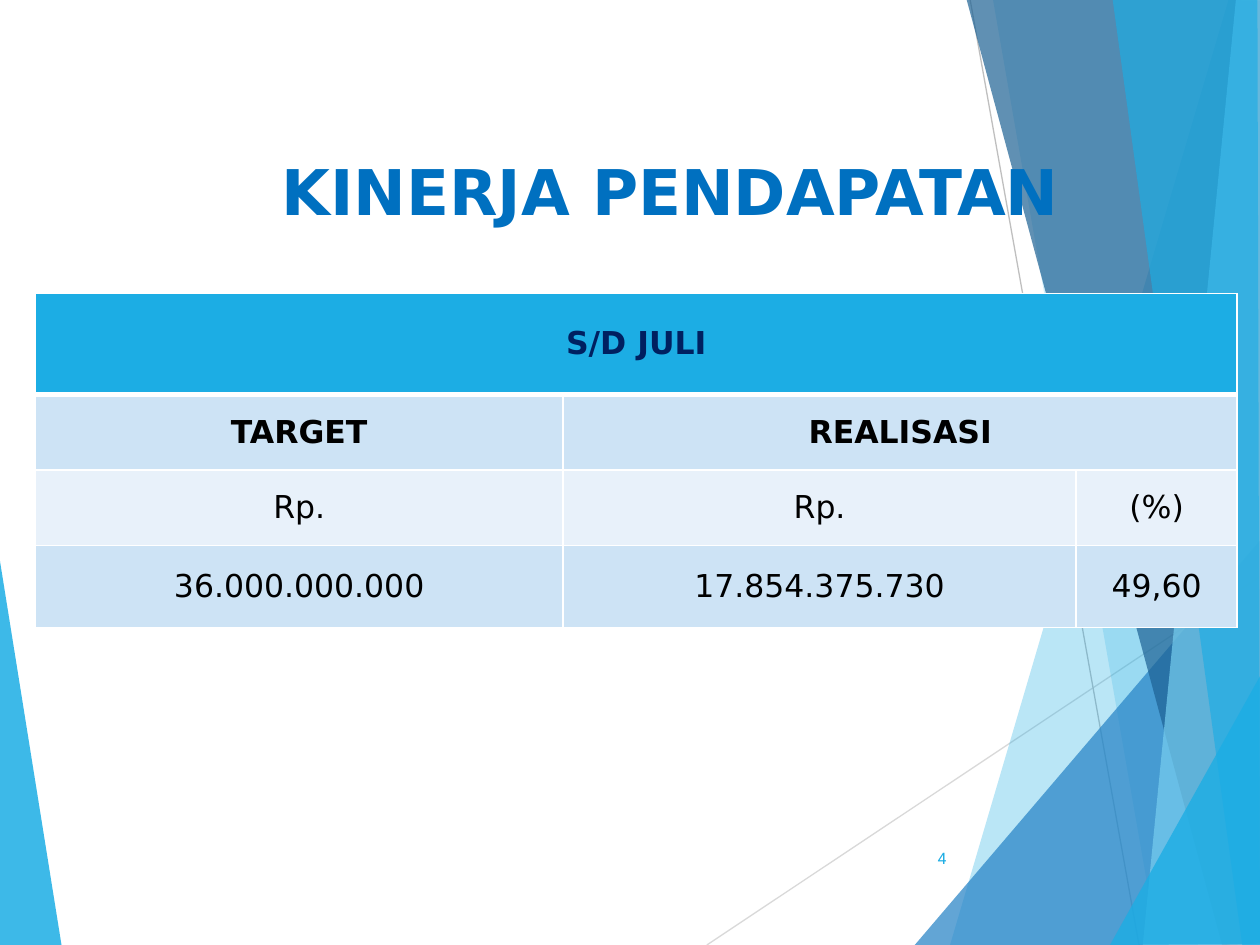
from dataclasses import dataclass

from lxml.etree import SubElement
from pptx import Presentation
from pptx.dml.color import RGBColor
from pptx.enum.shapes import MSO_CONNECTOR as Connector
from pptx.enum.text import MSO_ANCHOR as Anchor, PP_ALIGN as Align
from pptx.oxml.ns import qn
from pptx.util import Inches, Pt


@dataclass(frozen=True)
class Theme:
    sky: str = "1CADE4"
    blue: str = "2683C6"
    deep: str = "1D6294"
    pale: str = "77CEEF"
    title: str = "0070C0"
    navy: str = "002060"
    black: str = "000000"
    white: str = "FFFFFF"
    band_dark: str = "CDE3F5"
    band_light: str = "E8F1FA"
    heading_font: str = "DejaVu Sans"
    number_font: str = "Roboto"
    title_size: int = 36
    table_size: int = 18
    number_size: int = 9


@dataclass(frozen=True)
class Facet:
    points: tuple[tuple[float, float], ...]
    color: str
    opacity: int


@dataclass(frozen=True)
class Ray:
    start: tuple[float, float]
    end: tuple[float, float]
    color: str


@dataclass(frozen=True)
class Entry:
    row: int
    column: int
    text: str
    fill: str
    span: int = 1
    color: str = "000000"
    bold: bool = False
    tight: bool = False


THEME = Theme()

LEFT_FACET = Facet(((-0.01, 4.39), (0.49, 7.51), (-0.01, 7.5)), THEME.sky, 85)
RAYS = (
    Ray((5.61, 7.5), (10.01, 4.57), "D9D9D9"),
    Ray((7.7, 0), (9.04, 7.5), "BFBFBF"),
)
RIGHT_FACETS = (
    Facet(((9.75, 0), (7.54, 7.5), (10.02, 7.51), (10.01, 0.01)), THEME.sky, 30),
    Facet(((7.88, -0.01), (9.19, 7.5), (10.01, 7.5), (10.01, -0.01)), THEME.sky, 20),
    Facet(((7.26, 7.5), (10, 4.29), (10.01, 7.5)), THEME.blue, 72),
    Facet(((7.67, -0.01), (9.7, 7.5), (10.01, 7.49), (10.01, -0.01)), THEME.deep, 70),
    Facet(((9.81, -0.01), (9.07, 7.5), (10.01, 7.5), (10, -0.01)), THEME.pale, 70),
    Facet(((8.83, -0.01), (9.86, 7.5), (10, 7.5), (9.98, -0.01)), THEME.sky, 65),
    Facet(((8.81, 7.5), (10.01, 5.35), (10.01, 7.49)), THEME.sky, 80),
)

COLUMNS = (4.19, 4.07, 1.28)
ROWS = (0.8, 0.6, 0.6, 0.65)
ENTRIES = (
    Entry(0, 0, "S/D JULI", THEME.sky, span=3, color=THEME.navy, bold=True),
    Entry(1, 0, "TARGET", THEME.band_dark, bold=True),
    Entry(1, 1, "REALISASI", THEME.band_dark, span=2, bold=True),
    Entry(2, 0, "Rp.", THEME.band_light),
    Entry(2, 1, "Rp.", THEME.band_light),
    Entry(2, 2, "(%)", THEME.band_light),
    Entry(3, 0, "36.000.000.000", THEME.band_dark),
    Entry(3, 1, "17.854.375.730", THEME.band_dark, tight=True),
    Entry(3, 2, "49,60", THEME.band_dark, tight=True),
)


def add_facet(page, facet: Facet) -> None:
    first, *rest = [(Inches(x), Inches(y)) for x, y in facet.points]
    builder = page.shapes.build_freeform(*first)
    builder.add_line_segments(rest, close=True)
    shape = builder.convert_to_shape()
    shape.shadow.inherit = False
    shape.line.fill.background()
    shape.fill.solid()
    shape.fill.fore_color.rgb = RGBColor.from_string(facet.color)
    color = shape.fill._xPr.find(f".//{qn('a:srgbClr')}")
    SubElement(color, qn("a:alpha"), val=str(facet.opacity * 1000))


def add_ray(page, ray: Ray) -> None:
    ends = [Inches(value) for value in ray.start + ray.end]
    line = page.shapes.add_connector(Connector.STRAIGHT, *ends)
    line.line.color.rgb = RGBColor.from_string(ray.color)
    line.line.width = Pt(0.75)
    SubElement(line._element.spPr, qn("a:effectLst"))


def add_span(para, text: str, font: str, size: int, color: str, bold: bool) -> None:
    span = para.add_run()
    span.text = text
    span.font.name = font
    span.font.size = Pt(size)
    span.font.bold = bold
    span.font.color.rgb = RGBColor.from_string(color)


def add_text_box(page, left: float, top: float, width: float, height: float,
                 align: Align, anchor: Anchor):
    box = page.shapes.add_textbox(*map(Inches, (left, top, width, height)))
    frame = box.text_frame
    frame.word_wrap = True
    frame.vertical_anchor = anchor
    frame.paragraphs[0].alignment = align
    return frame


def set_borders(cell, bottom: float) -> None:
    properties = cell._tc.get_or_add_tcPr()
    widths = {"lnL": 1, "lnR": 1, "lnT": 1, "lnB": bottom}
    for position, (side, width) in enumerate(widths.items()):
        edge = properties.makeelement(qn(f"a:{side}"), {"w": str(Pt(width))})
        fill = SubElement(edge, qn("a:solidFill"))
        SubElement(fill, qn("a:srgbClr"), val=THEME.white)
        properties.insert(position, edge)


def add_income_table(page) -> None:
    frame = page.shapes.add_table(
        len(ROWS), len(COLUMNS), Inches(0.28), Inches(2.33),
        Inches(sum(COLUMNS)), Inches(sum(ROWS)))
    table = frame.table
    for column, width in zip(table.columns, COLUMNS):
        column.width = Inches(width)
    for row, height in zip(table.rows, ROWS):
        row.height = Inches(height)

    for entry in ENTRIES:
        cells = [table.cell(entry.row, entry.column + i) for i in range(entry.span)]
        for cell in cells:
            cell.fill.solid()
            cell.fill.fore_color.rgb = RGBColor.from_string(entry.fill)
            set_borders(cell, bottom=3 if entry.row == 0 else 1)
        cell = cells[0]
        if entry.span > 1:
            cell.merge(cells[-1])
        cell.vertical_anchor = Anchor.MIDDLE
        cell.margin_left = cell.margin_right = Inches(0 if entry.tight else 0.15)
        cell.margin_top = cell.margin_bottom = Inches(0 if entry.tight else 0.08)
        para = cell.text_frame.paragraphs[0]
        para.alignment = Align.CENTER
        add_span(para, entry.text, THEME.heading_font, THEME.table_size,
                 entry.color, entry.bold)


def main() -> None:
    deck = Presentation()
    deck.slide_width, deck.slide_height = Inches(10), Inches(7.5)
    page = deck.slides.add_slide(deck.slide_layouts[6])

    # Background facets and thin rays
    add_facet(page, LEFT_FACET)
    for ray in RAYS:
        add_ray(page, ray)
    for facet in RIGHT_FACETS:
        add_facet(page, facet)

    # Income table
    add_income_table(page)

    # Title, set low in its box
    title = add_text_box(page, 0.82, 0.83, 9, 0.79, Align.CENTER, Anchor.TOP)
    title.margin_top, title.margin_bottom = Inches(0.38), Inches(0)
    add_span(title.paragraphs[0], "KINERJA PENDAPATAN", THEME.heading_font,
             THEME.title_size, THEME.title, True)

    # Page number
    number = add_text_box(page, 7.05, 6.61, 0.56, 0.4, Align.RIGHT, Anchor.MIDDLE)
    add_span(number.paragraphs[0], "4", THEME.number_font,
             THEME.number_size, THEME.sky, False)

    deck.save("out.pptx")


if __name__ == "__main__":
    main()
